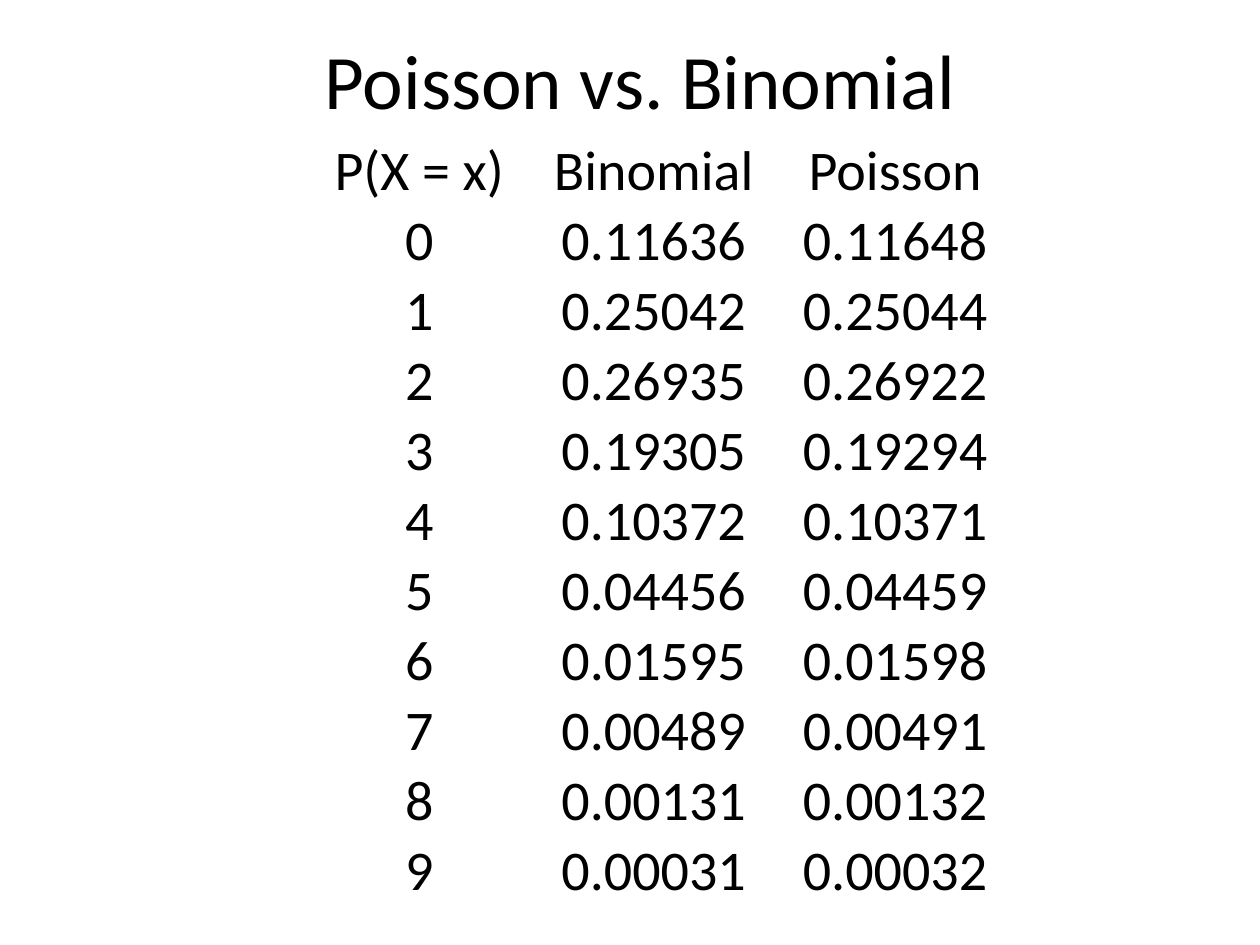
from lxml.etree import SubElement
from pptx import Presentation
from pptx.dml.color import RGBColor
from pptx.enum.text import MSO_ANCHOR, PP_ALIGN
from pptx.oxml.ns import qn
from pptx.util import Cm, Pt

# Content
TITLE = "Poisson vs. Binomial"
HEADINGS = ("P(X = x)", "Binomial", "Poisson")
BINOMIAL = ("0.11636", "0.25042", "0.26935", "0.19305", "0.10372",
            "0.04456", "0.01595", "0.00489", "0.00131", "0.00031")
POISSON = ("0.11648", "0.25044", "0.26922", "0.19294", "0.10371",
           "0.04459", "0.01598", "0.00491", "0.00132", "0.00032")
ROWS = [HEADINGS] + [(str(x), *pair) for x, pair in enumerate(zip(BINOMIAL, POISSON))]

# Look
COLORS = {"text": "000000", "paper": "FFFFFF"}
FONT = "Calibri"
COLUMN_WIDTHS = (3.81, 5.64, 4.09)
ROW_HEIGHT = 1.38


def style_text(text_frame, size):
    paragraph = text_frame.paragraphs[0]
    paragraph.alignment = PP_ALIGN.CENTER
    font = paragraph.runs[0].font
    font.name = FONT
    font.size = Pt(size)
    font.color.rgb = RGBColor.from_string(COLORS["text"])


def add_borders(cell):
    properties = cell._tc.get_or_add_tcPr()
    for side in ("a:lnL", "a:lnR", "a:lnT", "a:lnB"):
        line = SubElement(properties, qn(side), w=str(Pt(1)))
        fill = SubElement(line, qn("a:solidFill"))
        SubElement(fill, qn("a:srgbClr"), val=COLORS["paper"])


def fill_cell(cell, value):
    cell.text_frame.text = value
    style_text(cell.text_frame, 32)
    cell.vertical_anchor = MSO_ANCHOR.BOTTOM
    cell.margin_left = cell.margin_right = cell.margin_top = Cm(0.03)
    cell.margin_bottom = Cm(0)
    add_borders(cell)
    cell.fill.solid()
    cell.fill.fore_color.rgb = RGBColor.from_string(COLORS["paper"])


presentation = Presentation()
presentation.slide_width = Cm(25.4)
presentation.slide_height = Cm(19.05)
slide = presentation.slides.add_slide(presentation.slide_layouts[6])

# Probability table
probabilities = slide.shapes.add_table(
    len(ROWS), len(HEADINGS), Cm(6.55), Cm(2.74),
    Cm(sum(COLUMN_WIDTHS)), Cm(ROW_HEIGHT * len(ROWS))).table
probabilities.first_row = False
probabilities.horz_banding = False
for column, width in zip(probabilities.columns, COLUMN_WIDTHS):
    column.width = Cm(width)
for row, values in zip(probabilities.rows, ROWS):
    row.height = Cm(ROW_HEIGHT)
    for cell, value in zip(row.cells, values):
        fill_cell(cell, value)

# Title
title = slide.shapes.add_textbox(Cm(1.48), Cm(0), Cm(22.86), Cm(3.18)).text_frame
title.word_wrap = True
title.vertical_anchor = MSO_ANCHOR.MIDDLE
title.text = TITLE
style_text(title, 44)

presentation.save("out.pptx")
